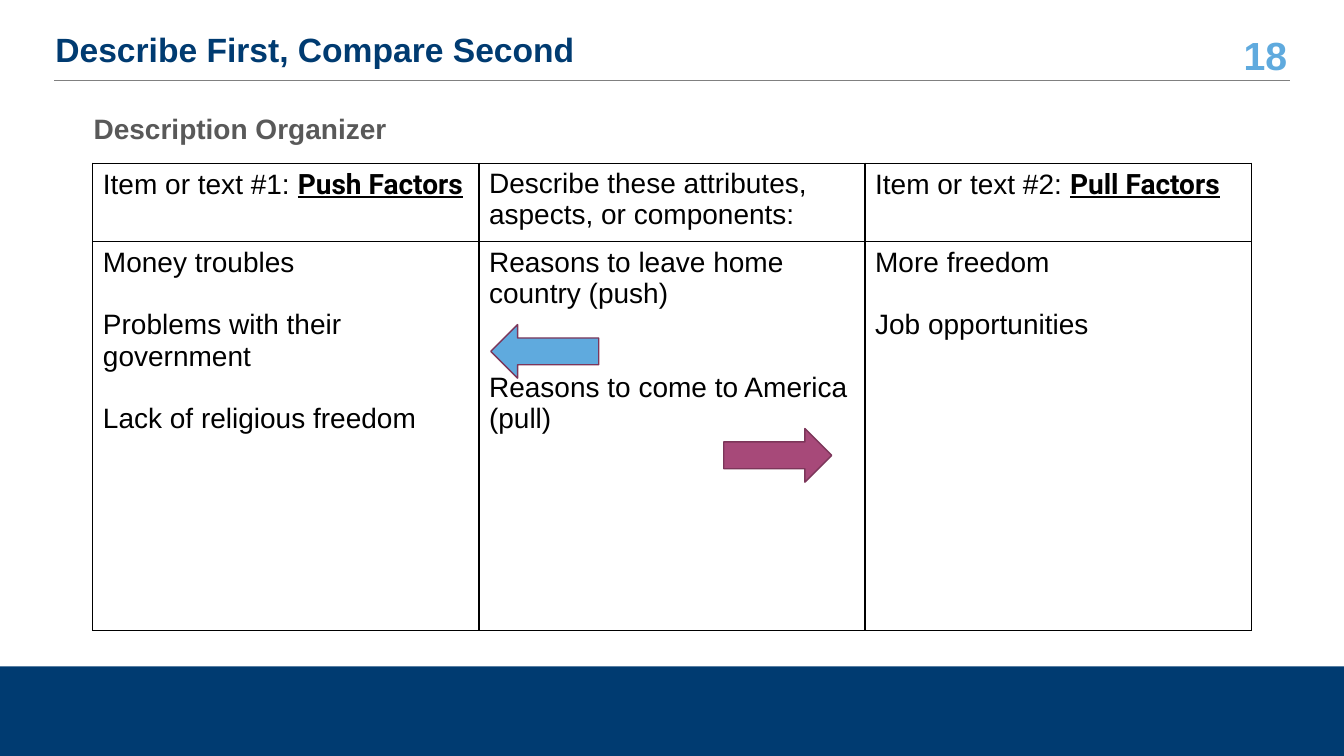
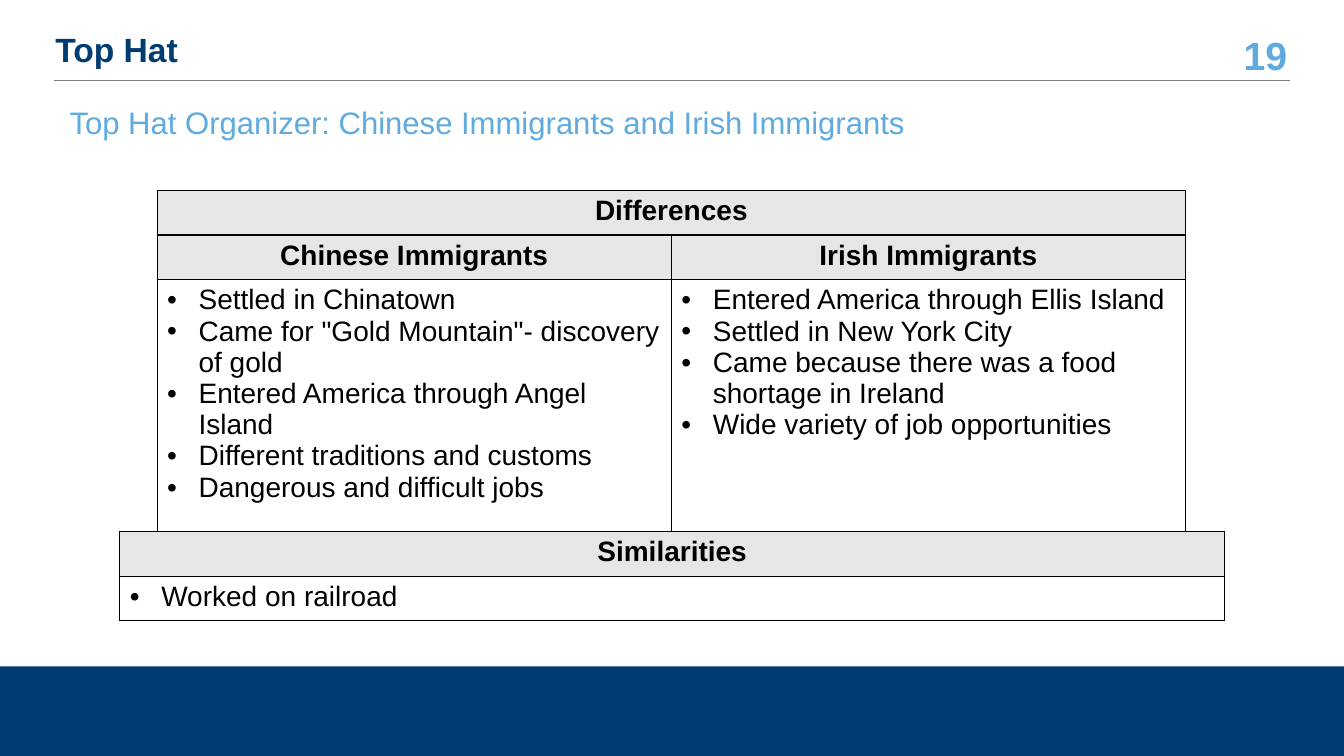
from dataclasses import dataclass

from pptx import Presentation
from pptx.dml.color import RGBColor
from pptx.enum.shapes import MSO_CONNECTOR, MSO_SHAPE
from pptx.enum.text import MSO_ANCHOR, MSO_AUTO_SIZE, PP_ALIGN
from pptx.oxml.ns import qn
from pptx.util import Cm, Pt
from lxml import etree

RECTANGLE = MSO_SHAPE.RECTANGLE
LEFT_ARROW, RIGHT_ARROW = MSO_SHAPE.LEFT_ARROW, MSO_SHAPE.RIGHT_ARROW
STRAIGHT = MSO_CONNECTOR.STRAIGHT
MIDDLE, TOP = MSO_ANCHOR.MIDDLE, MSO_ANCHOR.TOP
LEFT, CENTER, RIGHT = PP_ALIGN.LEFT, PP_ALIGN.CENTER, PP_ALIGN.RIGHT
NO_AUTOFIT = MSO_AUTO_SIZE.NONE

COLORS = {
    "navy": "003B71",
    "sky": "5FAADE",
    "plum": "A74979",
    "plum_dark": "7C365A",
    "rule": "808080",
    "subtitle": "595959",
    "heading_fill": "E7E6E6",
    "ink": "000000",
}
BODY_FONT, TERM_FONT = "Arial", "Roboto"
SLIDE_WIDTH, SLIDE_HEIGHT = 33.87, 19.05
BAND_TOP = 16.79
TABLE_SIZE = 20
BLANK_LINE = 22.5
BULLET_INDENT = 0.79


@dataclass(frozen=True)
class Box:
    left: float
    top: float
    width: float
    height: float

    def lengths(self) -> list:
        return [Cm(v) for v in (self.left, self.top, self.width, self.height)]


@dataclass(frozen=True)
class Entry:
    """Text of one table cell; gaps are blank lines before each paragraph."""
    paragraphs: tuple
    term: str = ""
    gaps: tuple = ()
    heading: bool = False
    bulleted: bool = False
    span: int = 1


@dataclass(frozen=True)
class Grid:
    left: float
    top: float
    column_width: float
    row_heights: tuple
    rows: tuple


@dataclass(frozen=True)
class Arrow:
    preset: MSO_SHAPE
    left: float
    top: float
    fill: str


TITLE_BOX = Box(1.14, 0.76, 29.46, 1.07)
NUMBER_BOX = Box(30.66, 0.84, 2.03, 1.07)

DESCRIPTION_GRID = Grid(2.34, 4.11, 9.73, (1.98, 9.8), (
    (
        Entry(("Item or text #1: ",), term="Push Factors"),
        Entry(("Describe these attributes, aspects, or components:",)),
        Entry(("Item or text #2: ",), term="Pull Factors"),
    ),
    (
        Entry(("Money troubles", "Problems with their government",
               "Lack of religious freedom"), gaps=(0, 1, 1)),
        Entry(("Reasons to leave home country (push)",
               "Reasons to come to America (pull)"), gaps=(0, 2)),
        Entry(("More freedom", "Job opportunities"), gaps=(0, 1)),
    ),
))

ARROWS = (
    Arrow(LEFT_ARROW, 12.37, 8.18, "sky"),
    Arrow(RIGHT_ARROW, 18.24, 10.8, "plum"),
)

DIFFERENCES_GRID = Grid(3.96, 4.8, 12.96, (1.12, 1.12, 6.35), (
    (Entry(("Differences",), heading=True, span=2),),
    (Entry(("Chinese Immigrants",), heading=True),
     Entry(("Irish Immigrants",), heading=True)),
    (
        Entry(("Settled in Chinatown",
               'Came for "Gold Mountain"- discovery of gold',
               "Entered America through Angel Island",
               "Different traditions and customs",
               "Dangerous and difficult jobs"), bulleted=True),
        Entry(("Entered America through Ellis Island",
               "Settled in New York City",
               "Came because there was a food shortage in Ireland",
               "Wide variety of job opportunities"), bulleted=True),
    ),
))

SIMILARITIES_GRID = Grid(3.02, 13.39, 27.84, (1.14, 1.1), (
    (Entry(("Similarities",), heading=True),),
    (Entry(("Worked on railroad",), bulleted=True),),
))


def rgb(name: str) -> RGBColor:
    return RGBColor.from_string(COLORS[name])


def style_run(run, size: float, color: str, bold: bool = False,
              face: str = BODY_FONT) -> None:
    run.font.name = face
    run.font.size = Pt(size)
    run.font.bold = bold
    run.font.color.rgb = rgb(color)


def set_bullet(paragraph, mark: str, indent: float) -> None:
    """Give the paragraph a hanging bullet, or none if mark is empty."""
    properties = paragraph._p.get_or_add_pPr()
    properties.set("marL", str(Cm(indent)))
    properties.set("indent", str(-Cm(indent)))
    if mark:
        etree.SubElement(properties, qn("a:buFont")).set("typeface", BODY_FONT)
        etree.SubElement(properties, qn("a:buChar")).set("char", mark)
    else:
        etree.SubElement(properties, qn("a:buNone"))


def write_line(shape, box: Box, text: str, size: float, color: str,
               bold: bool = True, align: PP_ALIGN = LEFT,
               anchor: MSO_ANCHOR = MIDDLE):
    """Place a one-paragraph text box or placeholder and format it."""
    shape.left, shape.top, shape.width, shape.height = box.lengths()
    frame = shape.text_frame
    frame.text = text
    frame.word_wrap = True
    frame.auto_size = NO_AUTOFIT
    frame.vertical_anchor = anchor
    paragraph = frame.paragraphs[0]
    paragraph.alignment = align
    style_run(paragraph.runs[0], size, color, bold)
    return paragraph


def add_label(slide, box: Box, text: str, size: float, color: str,
              align: PP_ALIGN = LEFT) -> None:
    label = slide.shapes.add_textbox(*box.lengths())
    write_line(label, box, text, size, color, align=align)


def add_filled(slide, preset: MSO_SHAPE, box: Box, fill: str,
               outline: str = ""):
    shape = slide.shapes.add_shape(preset, *box.lengths())
    shape.shadow.inherit = False
    shape.fill.solid()
    shape.fill.fore_color.rgb = rgb(fill)
    if outline:
        shape.line.color.rgb = rgb(outline)
        shape.line.width = Pt(1)
    else:
        shape.line.fill.background()


def add_framed_slide(deck, layout_index: int, title: str, number: int):
    """Add a slide with the shared band, number, rule and title."""
    slide = deck.slides.add_slide(deck.slide_layouts[layout_index])
    band = Box(0, BAND_TOP, SLIDE_WIDTH, SLIDE_HEIGHT - BAND_TOP)
    add_filled(slide, RECTANGLE, band, "navy")
    add_label(slide, NUMBER_BOX, str(number), 28, "sky", RIGHT)

    rule = slide.shapes.add_connector(
        STRAIGHT, Cm(1.37), Cm(2.03), Cm(32.51), Cm(2.03))
    rule.line.color.rgb = rgb("rule")
    rule.line.width = Pt(0.5)
    etree.SubElement(rule._element.spPr, qn("a:effectLst"))

    heading = write_line(slide.shapes.title, TITLE_BOX, title, 24, "navy")
    heading.line_spacing = 0.9
    return slide


def add_borders(cell) -> None:
    properties = cell._tc.get_or_add_tcPr()
    for side in ("lnL", "lnR", "lnT", "lnB"):
        border = etree.SubElement(properties, qn(f"a:{side}"), w=str(Pt(1)))
        fill = etree.SubElement(border, qn("a:solidFill"))
        etree.SubElement(fill, qn("a:srgbClr"), val=COLORS["ink"])


def fill_cell(cell, entry: Entry) -> None:
    if entry.heading:
        cell.fill.solid()
        cell.fill.fore_color.rgb = rgb("heading_fill")
    frame = cell.text_frame
    for index, text in enumerate(entry.paragraphs):
        paragraph = frame.paragraphs[0] if index == 0 else frame.add_paragraph()
        paragraph.text = text
        if entry.bulleted:
            set_bullet(paragraph, "•", BULLET_INDENT)
        if entry.gaps and entry.gaps[index]:
            paragraph.space_before = Pt(BLANK_LINE * entry.gaps[index])
        paragraph.alignment = CENTER if entry.heading else LEFT
        style_run(paragraph.runs[0], TABLE_SIZE, "ink", entry.heading)
    if entry.term:
        term = frame.paragraphs[0].add_run()
        term.text = entry.term
        style_run(term, TABLE_SIZE, "ink", True, TERM_FONT)
        term.font.underline = True


def add_grid(slide, grid: Grid) -> None:
    column_count = sum(entry.span for entry in grid.rows[0])
    box = Box(grid.left, grid.top, grid.column_width * column_count,
              sum(grid.row_heights))
    table = slide.shapes.add_table(
        len(grid.rows), column_count, *box.lengths()).table
    table.first_row = table.horz_banding = False
    for column in table.columns:
        column.width = Cm(grid.column_width)
    for row, height in zip(table.rows, grid.row_heights):
        row.height = Cm(height)
    for cell in table.iter_cells():
        add_borders(cell)
        cell.fill.background()
    for row_index, entries in enumerate(grid.rows):
        for column_index, entry in enumerate(entries):
            cell = table.cell(row_index, column_index)
            if entry.span > 1:
                cell.merge(table.cell(row_index, column_index + entry.span - 1))
            fill_cell(cell, entry)


def build_description(deck) -> None:
    slide = add_framed_slide(deck, 5, "Describe First, Compare Second", 18)
    add_grid(slide, DESCRIPTION_GRID)
    add_label(slide, Box(2.11, 2.67, 9.73, 1.12), "Description Organizer",
              20, "subtitle")
    for arrow in ARROWS:
        add_filled(slide, arrow.preset, Box(arrow.left, arrow.top, 2.72, 1.35),
                   arrow.fill, "plum_dark")


def build_top_hat(deck) -> None:
    slide = add_framed_slide(deck, 1, "Top Hat", 19)
    subtitle = write_line(
        slide.placeholders[1], Box(1.5, 2.49, 22, 1.7),
        "Top Hat Organizer: Chinese Immigrants and Irish Immigrants",
        22.2, "sky", bold=False, anchor=TOP)
    set_bullet(subtitle, "", 0)
    subtitle.space_before = Pt(0)
    add_grid(slide, DIFFERENCES_GRID)
    add_grid(slide, SIMILARITIES_GRID)


def main() -> None:
    deck = Presentation()
    deck.slide_width, deck.slide_height = Cm(SLIDE_WIDTH), Cm(SLIDE_HEIGHT)
    build_description(deck)
    build_top_hat(deck)
    deck.save("out.pptx")


if __name__ == "__main__":
    main()
